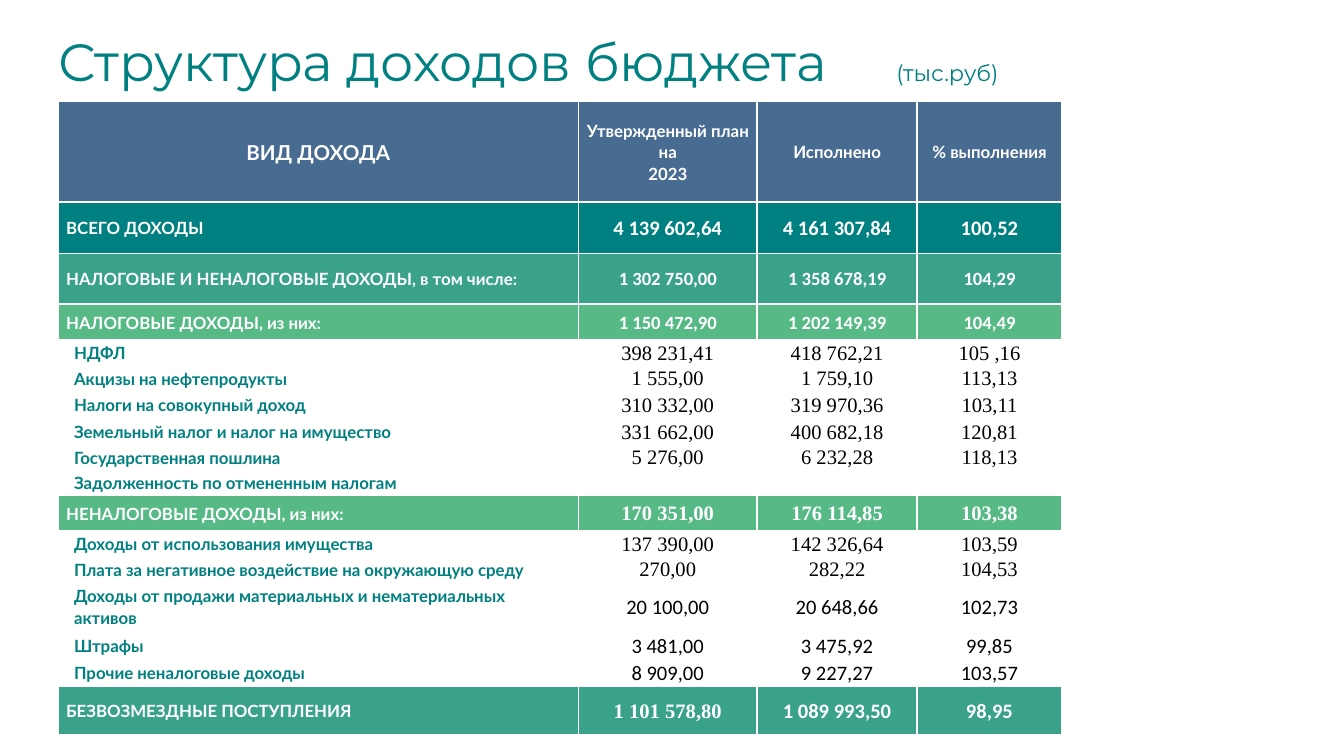
from dataclasses import dataclass
from typing import Optional

from lxml import etree
from pptx import Presentation
from pptx.dml.color import RGBColor
from pptx.enum.text import MSO_ANCHOR, MSO_AUTO_SIZE, PP_ALIGN
from pptx.oxml.ns import qn
from pptx.util import Cm, Pt

MIDDLE = MSO_ANCHOR.MIDDLE
NO_AUTOFIT = MSO_AUTO_SIZE.NONE
LEFT, CENTER = PP_ALIGN.LEFT, PP_ALIGN.CENTER

WHITE = RGBColor(0xFF, 0xFF, 0xFF)
BLACK = RGBColor(0x00, 0x00, 0x00)
TEAL = RGBColor(0x00, 0x80, 0x80)
SLATE = RGBColor(0x48, 0x6B, 0x92)
SEA = RGBColor(0x3B, 0xA2, 0x8A)
GREEN = RGBColor(0x57, 0xBA, 0x86)

LATO, CALIBRI, TIMES = "Lato", "Calibri", "Times New Roman"
TITLE_FONT = "Montserrat"

COLUMN_WIDTHS = [9.83, 3.38, 3.02, 2.74]
HEADERS = ["ВИД ДОХОДА", "Утвержденный план на\n2023", "Исполнено", "% выполнения"]
HEADER_HEIGHT = 1.9


@dataclass
class IncomeRow:
    height: float
    fill: Optional[RGBColor]
    fonts: list
    size: int
    texts: list
    label_size: int = 9


def total(height, fill, fonts, size, *texts, label_size=9):
    return IncomeRow(height, fill, fonts, size, texts, label_size)


def detail(height, font, *texts):
    return IncomeRow(height, None, [font] * 3, 11, texts)


ROWS = [
    total(0.98, TEAL, [CALIBRI] * 3, 11,
          "ВСЕГО ДОХОДЫ", "4 139 602,64", "4 161 307,84", "100,52"),
    total(0.95, SEA, [CALIBRI] * 3, 10,
          "НАЛОГОВЫЕ И НЕНАЛОГОВЫЕ ДОХОДЫ, в том числе:",
          "1 302 750,00", "1 358 678,19", "104,29"),
    total(0.68, GREEN, [CALIBRI] * 3, 10,
          "НАЛОГОВЫЕ ДОХОДЫ, из них:", "1 150 472,90", "1 202 149,39", "104,49"),
    detail(0.48, TIMES, "НДФЛ", "398 231,41", "418 762,21", "105 ,16"),
    detail(0.48, TIMES, "Акцизы на нефтепродукты", "1 555,00", "1 759,10", "113,13"),
    detail(0.53, TIMES, "Налоги на совокупный доход",
           "310 332,00", "319 970,36", "103,11"),
    detail(0.48, TIMES, "Земельный налог и налог на имущество",
           "331 662,00", "400 682,18", "120,81"),
    detail(0.48, TIMES, "Государственная пошлина", "5 276,00", "6 232,28", "118,13"),
    detail(0.48, TIMES, "Задолженность по отмененным налогам", "", "", ""),
    total(0.68, GREEN, [TIMES] * 3, 11,
          "НЕНАЛОГОВЫЕ ДОХОДЫ, из них:", "170 351,00", "176 114,85", "103,38"),
    detail(0.48, TIMES, "Доходы от использования имущества",
           "137 390,00", "142 326,64", "103,59"),
    detail(0.47, TIMES, "Плата за негативное воздействие на окружающую среду",
           "270,00", "282,22", "104,53"),
    detail(0.95, CALIBRI, "Доходы от продажи материальных и нематериальных активов",
           "20 100,00", "20 648,66", "102,73"),
    detail(0.5, CALIBRI, "Штрафы", "3 481,00", "3 475,92", "99,85"),
    detail(0.52, CALIBRI, "Прочие неналоговые доходы",
           "8 909,00", "9 227,27", "103,57"),
    total(0.92, SEA, [TIMES, CALIBRI, CALIBRI], 11,
          "БЕЗВОЗМЕЗДНЫЕ ПОСТУПЛЕНИЯ", "1 101 578,80", "1 089 993,50", "98,95"),
]


def set_font(font, name, size, color, bold):
    font.name = name
    font.size = Pt(size)
    font.color.rgb = color
    font.bold = bold


def add_borders(cell):
    properties = cell._tc.get_or_add_tcPr()
    for index, side in enumerate(("lnL", "lnR", "lnT", "lnB")):
        line = etree.Element(qn("a:" + side), w=str(Pt(1)))
        solid = etree.SubElement(line, qn("a:solidFill"))
        etree.SubElement(solid, qn("a:srgbClr"), val=str(WHITE))
        properties.insert(index, line)


def fill_cell(cell, text, fill, align, name, size, color, bold, indent=0.15):
    cell.vertical_anchor = MIDDLE
    cell.margin_left, cell.margin_right = Cm(indent), Cm(0.15)
    cell.margin_top = cell.margin_bottom = 0
    cell.text = text
    for para in cell.text_frame.paragraphs:
        para.alignment = align
        para.line_spacing = 1.07
        set_font(para.font, name, size, color, bold)
    if fill is None:
        cell.fill.background()
    else:
        cell.fill.solid()
        cell.fill.fore_color.rgb = fill
    add_borders(cell)


def place_title(page, left, top, width, height):
    title = page.shapes.title
    title.left, title.top, title.width, title.height = left, top, width, height
    frame = title.text_frame
    frame.auto_size = NO_AUTOFIT
    frame.word_wrap = True
    frame.vertical_anchor = MIDDLE
    frame.margin_left = frame.margin_right = 0
    frame.margin_top = frame.margin_bottom = 0
    para = frame.paragraphs[0]
    para.alignment = LEFT
    tabs = etree.SubElement(para._p.get_or_add_pPr(), qn("a:tabLst"))
    etree.SubElement(tabs, qn("a:tab"), pos=str(Cm(15.84)), algn="l")
    for text, size in (("Структура доходов бюджета", 28), ("\t(тыс.руб)", 12)):
        span = para.add_run()
        span.text = text
        set_font(span.font, TITLE_FONT, size, TEAL, False)


def place_income_table(page, left, top, width, height):
    table = page.shapes.add_table(
        len(ROWS) + 1, len(HEADERS), left, top, width, height).table
    table.first_row = False
    table.horz_banding = False
    for column, column_width in zip(table.columns, COLUMN_WIDTHS):
        column.width = Cm(column_width)

    table.rows[0].height = Cm(HEADER_HEIGHT)
    for index, header in enumerate(HEADERS):
        size = 11 if index == 0 else 9
        fill_cell(table.cell(0, index), header, SLATE, CENTER, LATO, size, WHITE, True)

    for number, row in enumerate(ROWS, start=1):
        table.rows[number].height = Cm(row.height)
        is_total = row.fill is not None
        label, *values = row.texts
        fill_cell(table.cell(number, 0), label, row.fill, LEFT, LATO, row.label_size,
                  WHITE if is_total else TEAL, True, 0.15 if is_total else 0.3)
        for index, (value, name) in enumerate(zip(values, row.fonts), start=1):
            fill_cell(table.cell(number, index), value, row.fill, CENTER, name,
                      row.size if value else 8, WHITE if is_total else BLACK, is_total)


def main():
    deck = Presentation()
    deck.slide_width, deck.slide_height = Cm(25.4), Cm(14.28)
    page = deck.slides.add_slide(deck.slide_layouts[5])
    place_title(page, Cm(1.1), Cm(0.64), Cm(22.63), Cm(1))
    table_height = HEADER_HEIGHT + sum(row.height for row in ROWS)
    place_income_table(page, Cm(1.1), Cm(1.91), Cm(sum(COLUMN_WIDTHS)), Cm(table_height))
    deck.save("out.pptx")


if __name__ == "__main__":
    main()
